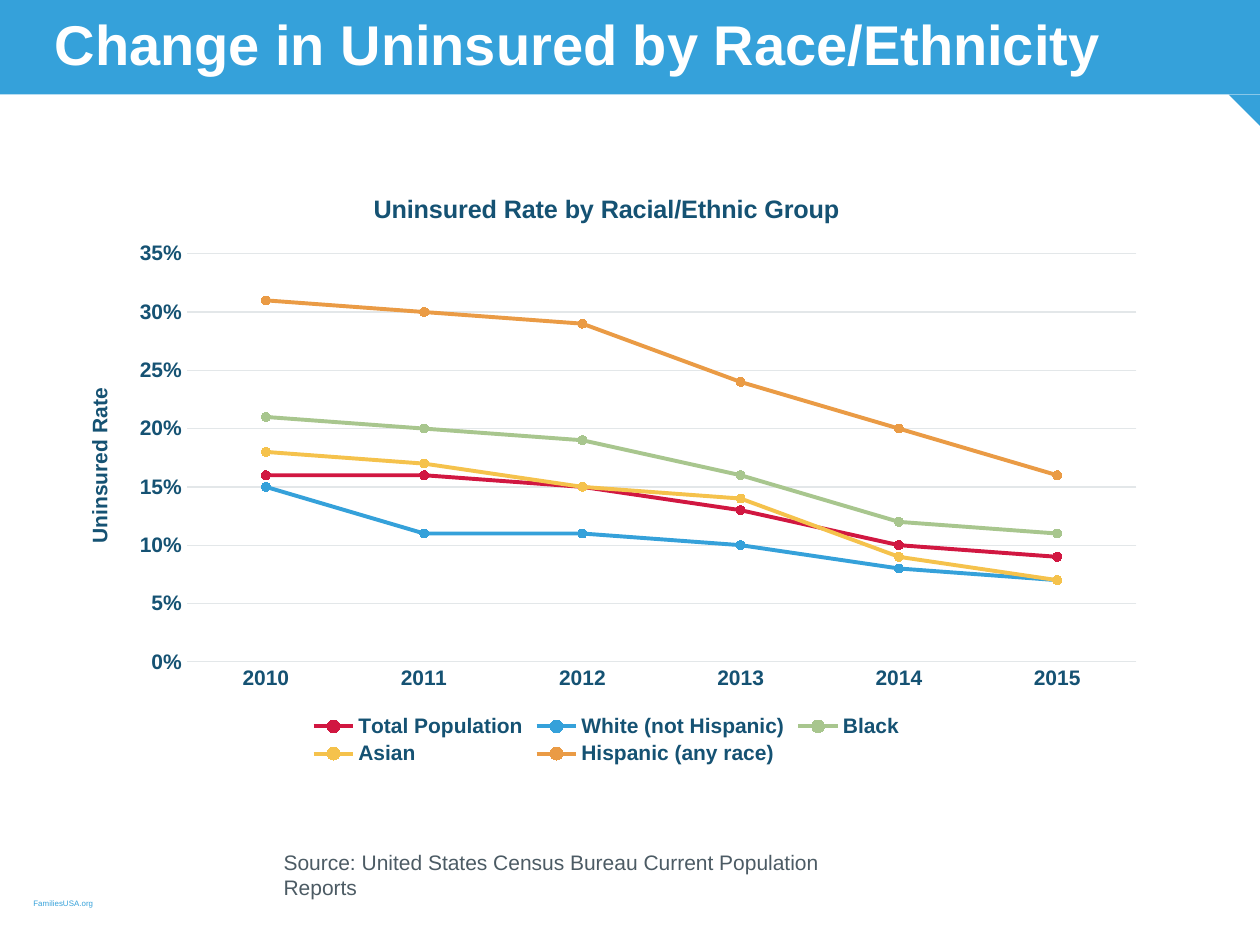
from lxml import etree
from pptx import Presentation
from pptx.chart.data import CategoryChartData
from pptx.dml.color import RGBColor
from pptx.enum.chart import (XL_CHART_TYPE, XL_LEGEND_POSITION,
                             XL_MARKER_STYLE, XL_TICK_MARK)
from pptx.enum.shapes import MSO_SHAPE
from pptx.enum.text import MSO_ANCHOR, PP_ALIGN
from pptx.oxml.ns import qn
from pptx.util import Pt

RECT = MSO_SHAPE.RECTANGLE
CORNER = MSO_SHAPE.RIGHT_TRIANGLE
LINES = XL_CHART_TYPE.LINE_MARKERS
BOTTOM = XL_LEGEND_POSITION.BOTTOM
CIRCLE = XL_MARKER_STYLE.CIRCLE
NO_TICK = XL_TICK_MARK.NONE
MIDDLE = MSO_ANCHOR.MIDDLE
TOP = MSO_ANCHOR.TOP
LEFT = PP_ALIGN.LEFT

FONT = "Arial"
BLUE, NAVY, GRAY, GRID, WHITE = "35A1DA", "155273", "4C5B64", "E3E7E9", "FFFFFF"
YEARS = ["2010", "2011", "2012", "2013", "2014", "2015"]
GROUPS = [
    ("Total Population", "D11741", [0.16, 0.16, 0.15, 0.13, 0.10, 0.09]),
    ("White (not Hispanic)", BLUE, [0.15, 0.11, 0.11, 0.10, 0.08, 0.07]),
    ("Black", "A8C68E", [0.21, 0.20, 0.19, 0.16, 0.12, 0.11]),
    ("Asian", "F5C24C", [0.18, 0.17, 0.15, 0.14, 0.09, 0.07]),
    ("Hispanic (any race)", "EA9B45", [0.31, 0.30, 0.29, 0.24, 0.20, 0.16]),
]


def rgb(code):
    return RGBColor.from_string(code)


def set_font(font, size, color, bold=False):
    font.name = FONT
    font.size = Pt(size)
    font.bold = bold
    font.color.rgb = rgb(color)


def set_line(line, color, width):
    line.color.rgb = rgb(color)
    line.width = Pt(width)


def add_block(slide, kind, left, top, width, height, turn=0):
    block = slide.shapes.add_shape(kind, Pt(left), Pt(top), Pt(width), Pt(height))
    block.shadow.inherit = False
    block.fill.solid()
    block.fill.fore_color.rgb = rgb(BLUE)
    block.line.fill.background()
    block.rotation = turn


def write(frame, text, size, color, bold=False, anchor=TOP):
    frame.word_wrap = True
    frame.vertical_anchor = anchor
    frame.text = text
    para = frame.paragraphs[0]
    para.alignment = LEFT
    set_font(para.font, size, color, bold)


def add_text(slide, text, left, top, width, height, size, color):
    box = slide.shapes.add_textbox(Pt(left), Pt(top), Pt(width), Pt(height))
    write(box.text_frame, text, size, color)


def set_title(slide, text):
    """Place the title in front of the band."""
    title = slide.shapes.title
    title.left, title.top, title.width, title.height = Pt(24), Pt(1.5), Pt(679), Pt(46)
    write(title.text_frame, text, 32, WHITE, True, MIDDLE)
    slide.shapes._spTree.append(title._element)


def name_part(part, text, size):
    """Give a chart or an axis its title."""
    frame = part.text_frame
    frame.text = text
    set_font(frame.paragraphs[0].font, size, NAVY, True)


def place_plot(chart, left, top, width, height):
    """Fix the inner plot area, in fractions of the chart."""
    area = chart._chartSpace.chart.plotArea
    for old in area.findall(qn("c:layout")):
        area.remove(old)
    layout = etree.Element(qn("c:layout"))
    manual = etree.SubElement(layout, qn("c:manualLayout"))
    parts = [("layoutTarget", "inner"), ("xMode", "edge"), ("yMode", "edge"),
             ("x", left), ("y", top), ("w", width), ("h", height)]
    for tag, val in parts:
        etree.SubElement(manual, qn("c:" + tag)).set("val", str(val))
    area.insert(0, layout)


def style_axes(chart):
    cats, rates = chart.category_axis, chart.value_axis
    for axis in (cats, rates):
        axis.major_tick_mark = axis.minor_tick_mark = NO_TICK
        set_font(axis.tick_labels.font, 12, NAVY, True)
    set_line(cats.format.line, GRID, 0.75)
    rates.format.line.fill.background()
    rates.minimum_scale, rates.maximum_scale, rates.major_unit = 0, 0.35, 0.05
    rates.has_major_gridlines = True
    set_line(rates.major_gridlines.format.line, GRID, 0.75)
    rates.tick_labels.number_format = "0%"
    rates.tick_labels.number_format_is_linked = False
    name_part(rates.axis_title, "Uninsured Rate", 12)


def style_series(series, color):
    series.smooth = False
    set_line(series.format.line, color, 2.25)
    mark = series.marker
    mark.style, mark.size = CIRCLE, 5
    mark.format.fill.solid()
    mark.format.fill.fore_color.rgb = rgb(color)
    set_line(mark.format.line, color, 0.75)


def add_rates(slide):
    data = CategoryChartData(number_format="0%")
    data.categories = YEARS
    for name, _, vals in GROUPS:
        data.add_series(name, vals)
    frame = slide.shapes.add_chart(LINES, Pt(31), Pt(97), Pt(631), Pt(343), data)
    chart = frame.chart
    set_font(chart.font, 12, NAVY, True)
    name_part(chart.chart_title, "Uninsured Rate by Racial/Ethnic Group", 14.4)
    chart.chart_title.include_in_layout = False
    chart.has_legend = True
    chart.legend.position = BOTTOM
    chart.legend.include_in_layout = False
    set_font(chart.legend.font, 12, NAVY, True)
    plot = chart.plots[0]
    plot.vary_by_categories = False
    for series, (_, color, _) in zip(plot.series, GROUPS):
        style_series(series, color)
    style_axes(chart)
    place_plot(chart, 0.12, 0.14, 0.86, 0.68)


def main():
    deck = Presentation()
    deck.slide_width, deck.slide_height = Pt(720), Pt(540)
    slide = deck.slides.add_slide(deck.slide_layouts[5])
    add_block(slide, RECT, 0, 0, 720, 54)
    add_block(slide, CORNER, 702, 54, 18, 18, 180)
    add_text(slide, "FamiliesUSA.org", 12, 510, 246, 13, 4.5, BLUE)
    add_text(slide, "Source: United States Census Bureau Current Population Reports",
             155, 482, 332, 22, 12, GRAY)
    add_rates(slide)
    set_title(slide, "Change in Uninsured by Race/Ethnicity")
    deck.save("out.pptx")


if __name__ == "__main__":
    main()
